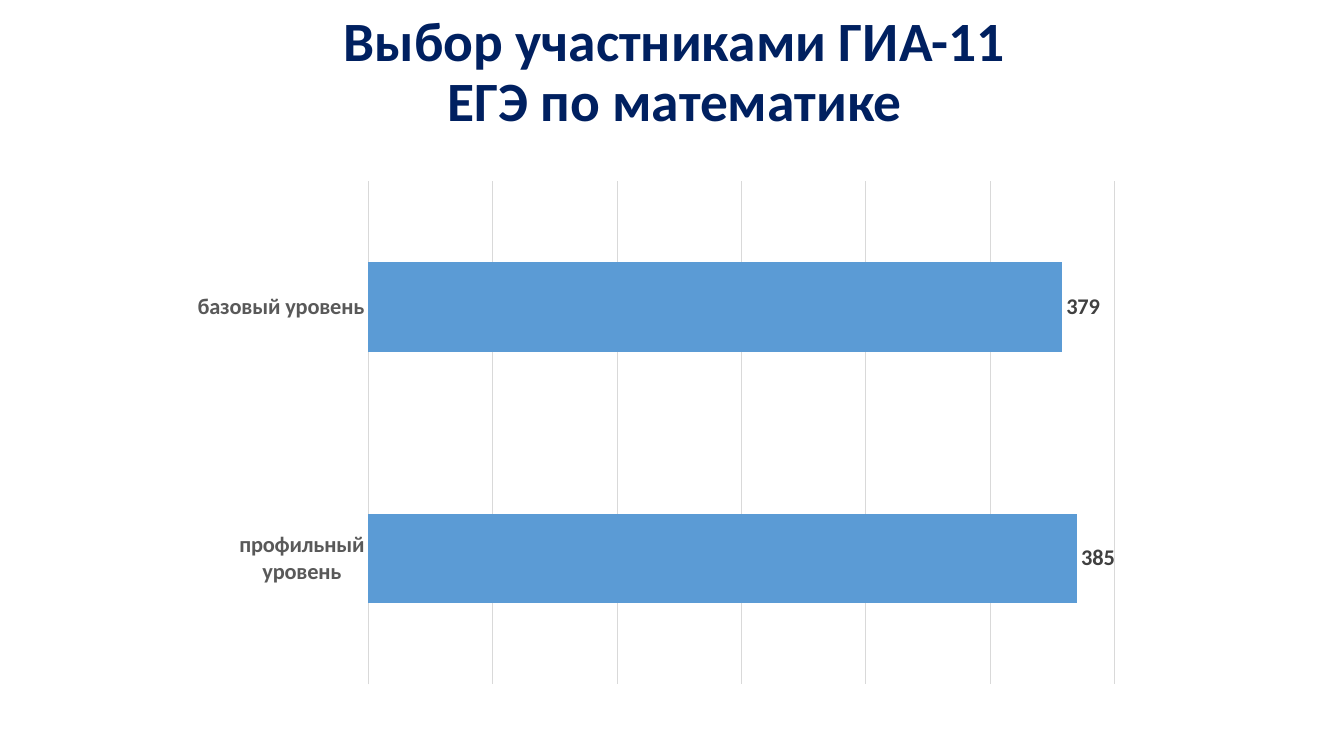
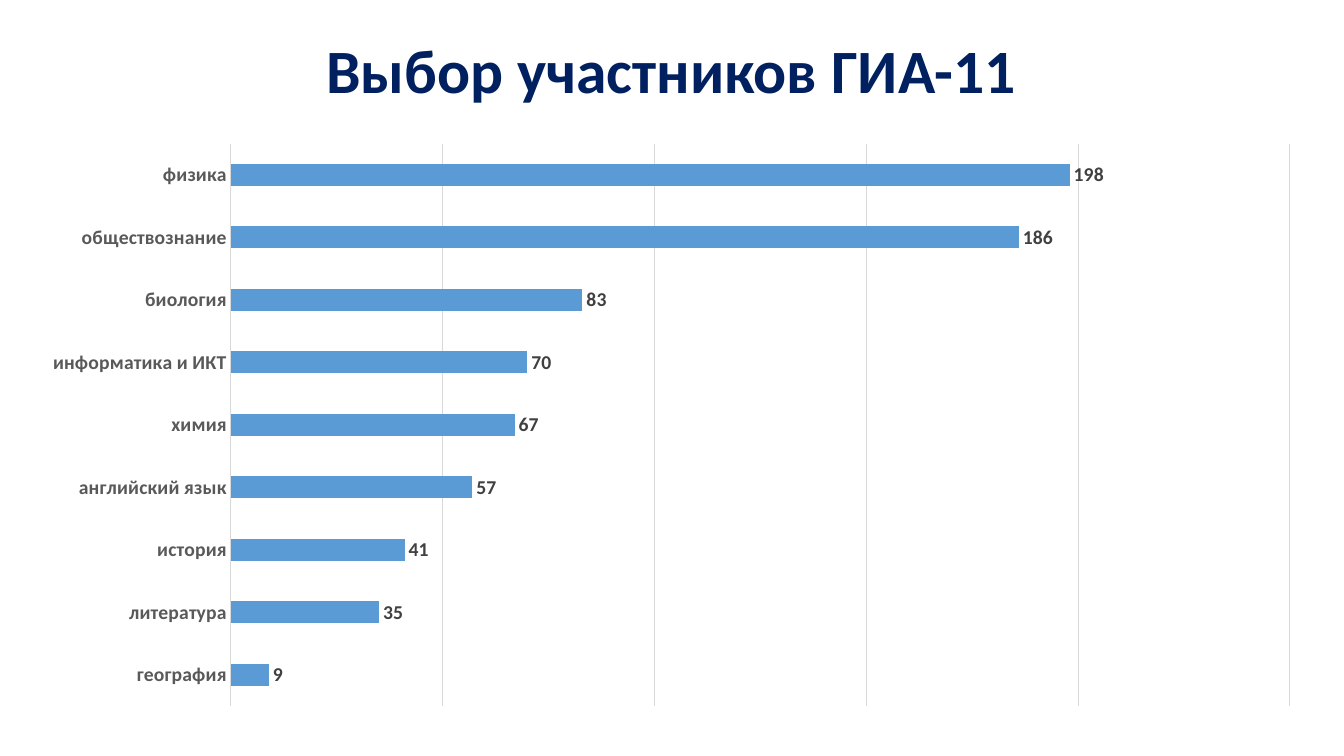
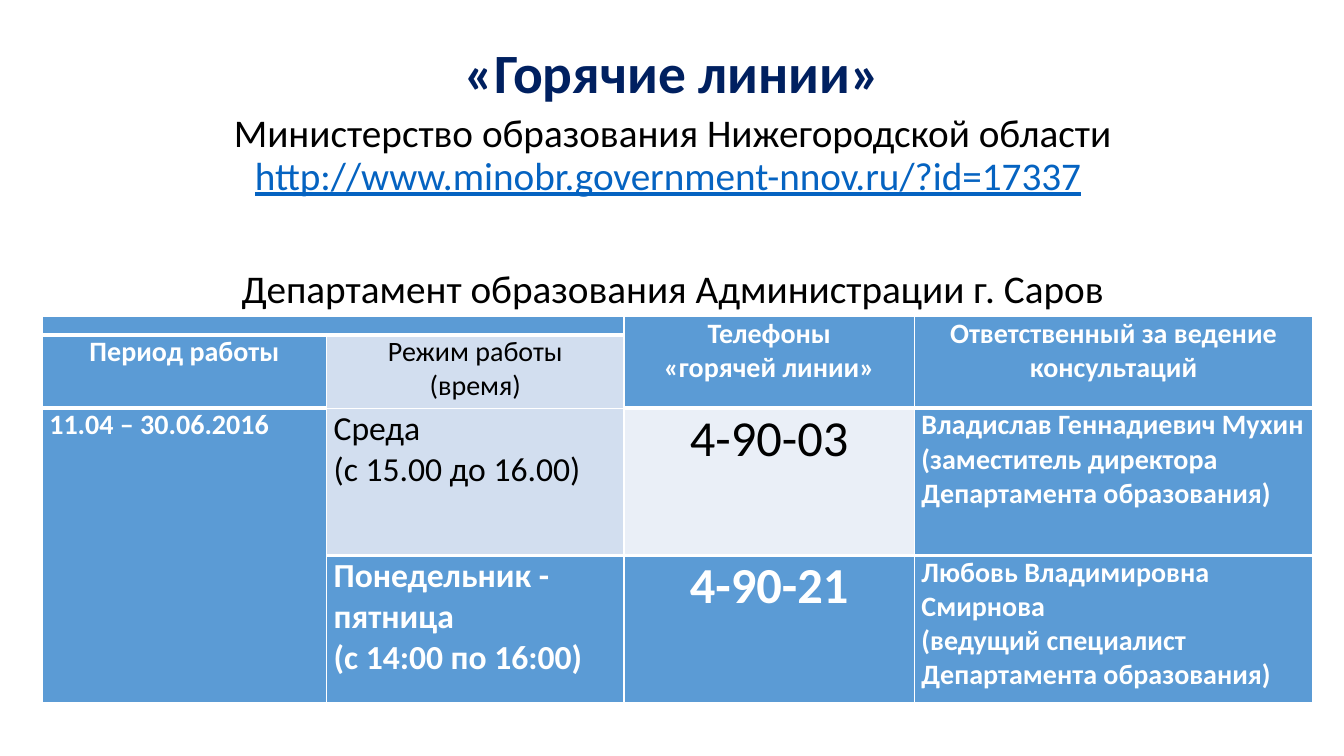
"""Build three slides on exam choices and hotlines."""
from dataclasses import dataclass

from lxml import etree
from pptx import Presentation
from pptx.chart.data import CategoryChartData
from pptx.dml.color import RGBColor
from pptx.enum.chart import XL_CHART_TYPE, XL_LABEL_POSITION, XL_TICK_MARK
from pptx.enum.text import MSO_ANCHOR, PP_ALIGN
from pptx.oxml.ns import qn
from pptx.util import Inches, Pt

BAR = XL_CHART_TYPE.BAR_CLUSTERED
OUTSIDE = XL_LABEL_POSITION.OUTSIDE_END
NO_TICK = XL_TICK_MARK.NONE
MIDDLE, TOP = MSO_ANCHOR.MIDDLE, MSO_ANCHOR.TOP
LEFT, CENTER = PP_ALIGN.LEFT, PP_ALIGN.CENTER


@dataclass(frozen=True)
class Theme:
    """Colours and type sizes shared by the slides."""
    font: str = "Calibri"
    navy: str = "002060"
    blue: str = "5B9BD5"
    pale: str = "D2DEEF"
    paler: str = "EAEFF7"
    white: str = "FFFFFF"
    black: str = "000000"
    link: str = "0563C1"
    grid: str = "D9D9D9"
    axis: str = "595959"
    label: str = "404040"
    title: float = 39.6
    title_large: float = 44
    body: float = 28
    phone: float = 36
    hours: float = 24
    cell: float = 20
    chart: float = 10
    tiny: float = 8


T = Theme()


@dataclass(frozen=True)
class Cell:
    """A table cell with its place, span and look."""
    row: int
    col: int
    text: str = ""
    fill: str = T.blue
    size: float = T.cell
    align: PP_ALIGN = LEFT
    rows: int = 1
    cols: int = 1


def rgb(value):
    """Turn a hex string into a colour."""
    return RGBColor.from_string(value)


def style_font(font, size, color, bold=False):
    """Set face, size, colour and weight of a font."""
    font.name, font.size, font.bold = T.font, Pt(size), bold
    font.color.rgb = rgb(color)


def write(p, text, size=T.body, color=T.black, bold=False, underline=False,
          align=CENTER, spacing=None, before=0):
    """Append formatted text to a paragraph, breaking lines at vertical tabs."""
    p.alignment, p.line_spacing, p.space_before = align, spacing, Pt(before)
    for i, line in enumerate(text.split("\v")):
        if i:
            p.add_line_break()
        r = p.add_run()
        r.text = line
        style_font(r.font, size, color, bold)
        r.font.underline = underline


def add_box(slide, box, anchor=TOP):
    """Add a wrapping text box and return its text frame."""
    tf = slide.shapes.add_textbox(*map(Inches, box)).text_frame
    tf.word_wrap, tf.vertical_anchor = True, anchor
    return tf


def add_title(slide, text, box, size=T.title):
    """Add the slide title."""
    tf = add_box(slide, box, MIDDLE)
    write(tf.paragraphs[0], text, size, T.navy, True, spacing=0.9)


def set_plot_area(chart, **layout):
    """Fix the inner plot area as fractions of the chart."""
    area = chart.plots[0]._element.getparent()
    for old in area.findall(qn("c:layout")):
        area.remove(old)
    holder = etree.Element(qn("c:layout"))
    manual = etree.SubElement(holder, qn("c:manualLayout"))
    values = {"layoutTarget": "inner", "xMode": "edge", "yMode": "edge", **layout}
    for tag, value in values.items():
        etree.SubElement(manual, qn("c:" + tag)).set("val", str(value))
    area.insert(0, holder)


def add_bars(slide, box, counts, size, low, high):
    """Add a horizontal bar chart of counts listed from the bottom up."""
    data = CategoryChartData()
    data.categories = list(counts)
    data.add_series("Участники", list(counts.values()))
    chart = slide.shapes.add_chart(BAR, *map(Inches, box), data).chart
    chart.has_title = chart.has_legend = False
    style_font(chart.font, T.chart, T.black)

    plot = chart.plots[0]
    plot.gap_width, plot.vary_by_categories = 182, False
    fill = plot.series[0].format.fill
    fill.solid()
    fill.fore_color.rgb = rgb(T.blue)
    plot.has_data_labels = True
    labels = plot.data_labels
    labels.show_value, labels.position = True, OUTSIDE
    style_font(labels.font, size, T.label, True)

    names, values = chart.category_axis, chart.value_axis
    names.major_tick_mark = names.minor_tick_mark = NO_TICK
    style_font(names.tick_labels.font, size, T.axis, True)
    values.visible, values.has_major_gridlines = False, True
    values.minimum_scale, values.maximum_scale = low, high
    values.major_unit = 50
    for line in (names.format.line, values.major_gridlines.format.line):
        line.color.rgb, line.width = rgb(T.grid), Pt(0.75)
    return chart


def edge_width(row, col):
    """Give the width of the border above a table position."""
    return 3 if 1 <= row <= 3 and (row, col) != (2, 1) else 1


def set_borders(cell, top, bottom):
    """Draw white borders round a table cell."""
    tc_pr = cell._tc.get_or_add_tcPr()
    widths = {"lnL": 1, "lnR": 1, "lnT": top, "lnB": bottom}
    for i, (tag, width) in enumerate(widths.items()):
        ln = etree.Element(qn("a:" + tag), w=str(Pt(width)))
        fill = etree.SubElement(ln, qn("a:solidFill"))
        etree.SubElement(fill, qn("a:srgbClr"), val=T.white)
        tc_pr.insert(i, ln)


def fill_cell(table, item):
    """Merge, colour, border and write one table cell."""
    cell = table.cell(item.row, item.col)
    last = item.row + item.rows
    if item.rows * item.cols > 1:
        cell.merge(table.cell(last - 1, item.col + item.cols - 1))
    cell.fill.solid()
    cell.fill.fore_color.rgb = rgb(item.fill)
    set_borders(cell, edge_width(item.row, item.col), edge_width(last, item.col))
    dark = item.fill == T.blue
    tf = cell.text_frame
    for i, line in enumerate(item.text.split("\n") if item.text else []):
        p = tf.add_paragraph() if i else tf.paragraphs[0]
        write(p, line, item.size, T.white if dark else T.black, dark,
              align=item.align)


def add_table(slide, left, top, widths, heights, items):
    """Add a table from column widths, row heights and cells."""
    table = slide.shapes.add_table(
        len(heights), len(widths), Inches(left), Inches(top),
        Inches(sum(widths)), Inches(sum(heights))).table
    table.first_row = table.horz_banding = False
    for column, width in zip(table.columns, widths):
        column.width = Inches(width)
    for row, height in zip(table.rows, heights):
        row.height = Inches(height)
    for cell in table.iter_cells():
        cell.margin_left = cell.margin_right = Inches(0.07)
        cell.margin_top = cell.margin_bottom = 0
    for item in items:
        fill_cell(table, item)
    for cell in table.iter_cells():
        if not cell.text_frame.text:
            p = cell.text_frame.paragraphs[0]
            etree.SubElement(p._p, qn("a:endParaRPr"), sz=str(T.tiny * 100))


def math_slide(slide):
    """Show the choice of maths exam level."""
    add_title(slide, "Выбор участниками ГИА-11\vЕГЭ по математике",
              (0.94, 0.16, 11.5, 1.14))
    counts = {"профильный уровень": 385, "базовый уровень": 379}
    chart = add_bars(slide, (1.9, 1.67, 9.38, 5.3), counts, 16, 100, 400)
    set_plot_area(chart, x=0.187, y=0.024, w=0.789, h=0.942)


def subjects_slide(slide):
    """Show the choice of exam subjects."""
    add_title(slide, "Выбор участников ГИА-11", (0.91, 0, 11.5, 1.45),
              T.title_large)
    counts = {
        "география": 9, "литература": 35, "история": 41,
        "английский язык": 57, "химия": 67, "информатика и ИКТ": 70,
        "биология": 83, "обществознание": 186, "физика": 198,
    }
    add_bars(slide, (0.27, 1.31, 12.78, 5.81), counts, 14, 0, 250)


def hotline_slide(slide):
    """Show the hotline contacts and hours."""
    add_title(slide, "«Горячие линии»", (0.92, 0.4, 11.5, 0.69))
    tf = add_box(slide, (0.92, 1.08, 11.5, 2.06))
    p = tf.paragraphs[0]
    para = {"spacing": 0.9, "before": 10}
    write(p, "Министерство образования Нижегородской области ", **para)
    write(p, "http://www.minobr.government-nnov.ru/?id=17337",
          color=T.link, underline=True, **para)
    write(p, " ", **para)
    write(tf.add_paragraph(), "Департамент образования Администрации г. Саров",
          spacing=0.9, before=50.7)
    add_table(slide, 0.42, 3.14, (2.82, 2.95, 2.88, 3.95),
              (0.18, 0.73, 1.46, 1.46), (
        Cell(0, 0, cols=2),
        Cell(0, 2, "Телефоны\n«горячей линии»", align=CENTER, rows=2),
        Cell(0, 3, "Ответственный за ведение консультаций", align=CENTER, rows=2),
        Cell(1, 0, "Период работы", align=CENTER),
        Cell(1, 1, "Режим работы\n(время)", T.pale, align=CENTER),
        Cell(2, 0, "11.04 – 30.06.2016", rows=2),
        Cell(2, 1, "Среда\n(с 15.00 до 16.00)", T.pale, T.hours),
        Cell(2, 2, "4-90-03", T.paler, T.phone, CENTER),
        Cell(2, 3, "Владислав Геннадиевич Мухин\n"
                   "(заместитель директора Департамента образования)"),
        Cell(3, 1, "Понедельник - пятница\n(с 14:00 по 16:00)", size=T.hours),
        Cell(3, 2, "4-90-21", size=T.phone, align=CENTER),
        Cell(3, 3, "Любовь Владимировна Смирнова\n"
                   "(ведущий специалист Департамента образования)"),
    ))


def main():
    """Build and save the presentation."""
    prs = Presentation()
    prs.slide_width, prs.slide_height = Inches(13.33), Inches(7.5)
    for build in (math_slide, subjects_slide, hotline_slide):
        build(prs.slides.add_slide(prs.slide_layouts[6]))
    prs.save("out.pptx")


if __name__ == "__main__":
    main()
